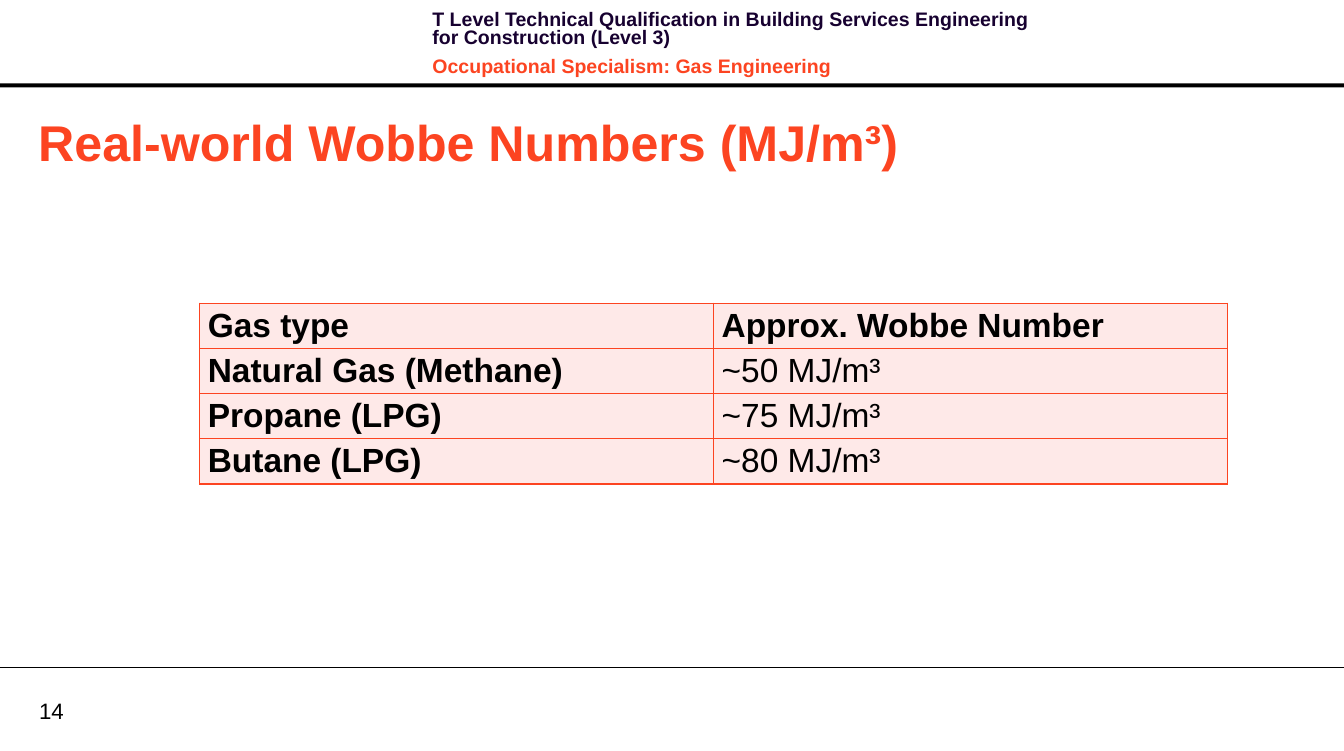
from lxml import etree
from pptx import Presentation
from pptx.dml.color import RGBColor
from pptx.enum.shapes import MSO_CONNECTOR, MSO_SHAPE
from pptx.enum.text import MSO_ANCHOR, MSO_AUTO_SIZE, PP_ALIGN
from pptx.oxml.ns import qn
from pptx.util import Inches, Pt

STRAIGHT = MSO_CONNECTOR.STRAIGHT
RECTANGLE = MSO_SHAPE.RECTANGLE
MIDDLE, TOP = MSO_ANCHOR.MIDDLE, MSO_ANCHOR.TOP
LEFT = PP_ALIGN.LEFT
NO_AUTOFIT = MSO_AUTO_SIZE.NONE

BLACK = RGBColor(0x00, 0x00, 0x00)
NAVY = RGBColor(0x17, 0x01, 0x30)
ORANGE = RGBColor(0xFC, 0x44, 0x21)
PINK = RGBColor(0xFE, 0xE9, 0xE8)

FONT = "Arial"
SLIDE_W, SLIDE_H = 13.39, 7.48
TITLE = "Real-world Wobbe Numbers (MJ/m³)"
COURSE = ("T Level Technical Qualification in Building Services Engineering "
          "for Construction (Level 3)")
SPECIALISM = "Occupational Specialism: Gas Engineering"
WOBBE_ROWS = [
    ("Gas type", "Approx. Wobbe Number"),
    ("Natural Gas (Methane)", "~50 MJ/m³"),
    ("Propane (LPG)", "~75 MJ/m³"),
    ("Butane (LPG)", "~80 MJ/m³"),
]


def write(p, text, size, color=BLACK, bold=False, spacing=None, before=0, after=0):
    p.alignment = LEFT
    p.space_before, p.space_after = Pt(before), Pt(after)
    if spacing:
        p.line_spacing = Pt(spacing)
    r = p.add_run()
    r.text = text
    r.font.name, r.font.size, r.font.bold = FONT, Pt(size), bold
    r.font.color.rgb = color


def set_frame(tf, anchor, x_margin=0.1, y_margin=0.05):
    tf.word_wrap = True
    tf.auto_size = NO_AUTOFIT
    tf.vertical_anchor = anchor
    tf.margin_left = tf.margin_right = Inches(x_margin)
    tf.margin_top = tf.margin_bottom = Inches(y_margin)


def add_box(slide, x, y, w, h, anchor=TOP, **margins):
    sp = slide.shapes.add_textbox(Inches(x), Inches(y), Inches(w), Inches(h))
    set_frame(sp.text_frame, anchor, **margins)
    return sp.text_frame


def add_bar(slide, y, h):
    sp = slide.shapes.add_shape(RECTANGLE, 0, Inches(y), Inches(SLIDE_W), Inches(h))
    sp.shadow.inherit = False
    sp.fill.solid()
    sp.fill.fore_color.rgb = BLACK
    sp.line.fill.background()


def add_rule(slide, y):
    line = slide.shapes.add_connector(
        STRAIGHT, 0, Inches(y), Inches(SLIDE_W), Inches(y))
    line.line.color.rgb = BLACK
    line.line.width = Pt(0.75)
    etree.SubElement(line._element.spPr, qn("a:effectLst"))


def set_borders(cell, color, width):
    tc_pr = cell._tc.get_or_add_tcPr()
    for i, side in enumerate(("lnL", "lnR", "lnT", "lnB")):
        ln = etree.Element(qn(f"a:{side}"), w=str(Pt(width)))
        fill = etree.SubElement(ln, qn("a:solidFill"))
        etree.SubElement(fill, qn("a:srgbClr"), val=str(color))
        tc_pr.insert(i, ln)


def add_wobbe_table(slide, x, y, col_w, row_h):
    rows, cols = len(WOBBE_ROWS), len(WOBBE_ROWS[0])
    table = slide.shapes.add_table(
        rows, cols, Inches(x), Inches(y),
        Inches(cols * col_w), Inches(rows * row_h)).table
    table.horz_banding = False
    for i, row in enumerate(WOBBE_ROWS):
        for j, text in enumerate(row):
            cell = table.cell(i, j)
            cell.fill.solid()
            cell.fill.fore_color.rgb = PINK
            set_borders(cell, ORANGE, 1)
            cell.vertical_anchor = MIDDLE
            cell.margin_left = cell.margin_right = Inches(0.08)
            cell.margin_top = cell.margin_bottom = Inches(0.03)
            write(cell.text_frame.paragraphs[0], text, 24, bold=i == 0 or j == 0)


def main():
    prs = Presentation()
    prs.slide_width, prs.slide_height = Inches(SLIDE_W), Inches(SLIDE_H)
    slide = prs.slides.add_slide(prs.slide_layouts[5])

    # Header
    add_bar(slide, 0.83, 0.04)
    tf = add_box(slide, 4.21, 0.07, 6.37, 0.64)
    write(tf.paragraphs[0], COURSE, 14, NAVY, True, spacing=13.1, after=4)
    write(tf.add_paragraph(), SPECIALISM, 14, ORANGE, True,
          spacing=13.1, before=4, after=4)

    # Title
    title = slide.shapes.title
    title.left, title.top = Inches(0.28), Inches(1.05)
    title.width, title.height = Inches(12.72), Inches(0.71)
    set_frame(title.text_frame, MIDDLE)
    write(title.text_frame.paragraphs[0], TITLE, 36, ORANGE, True)

    # Wobbe numbers
    add_wobbe_table(slide, 1.99, 3.02, col_w=5.12, row_h=0.45)

    # Footer
    add_rule(slide, 6.65)
    tf = add_box(slide, 0.39, 6.94, 0.64, 0.27, MIDDLE, x_margin=0, y_margin=0)
    write(tf.paragraphs[0], "14", 16)

    prs.save("out.pptx")


if __name__ == "__main__":
    main()
